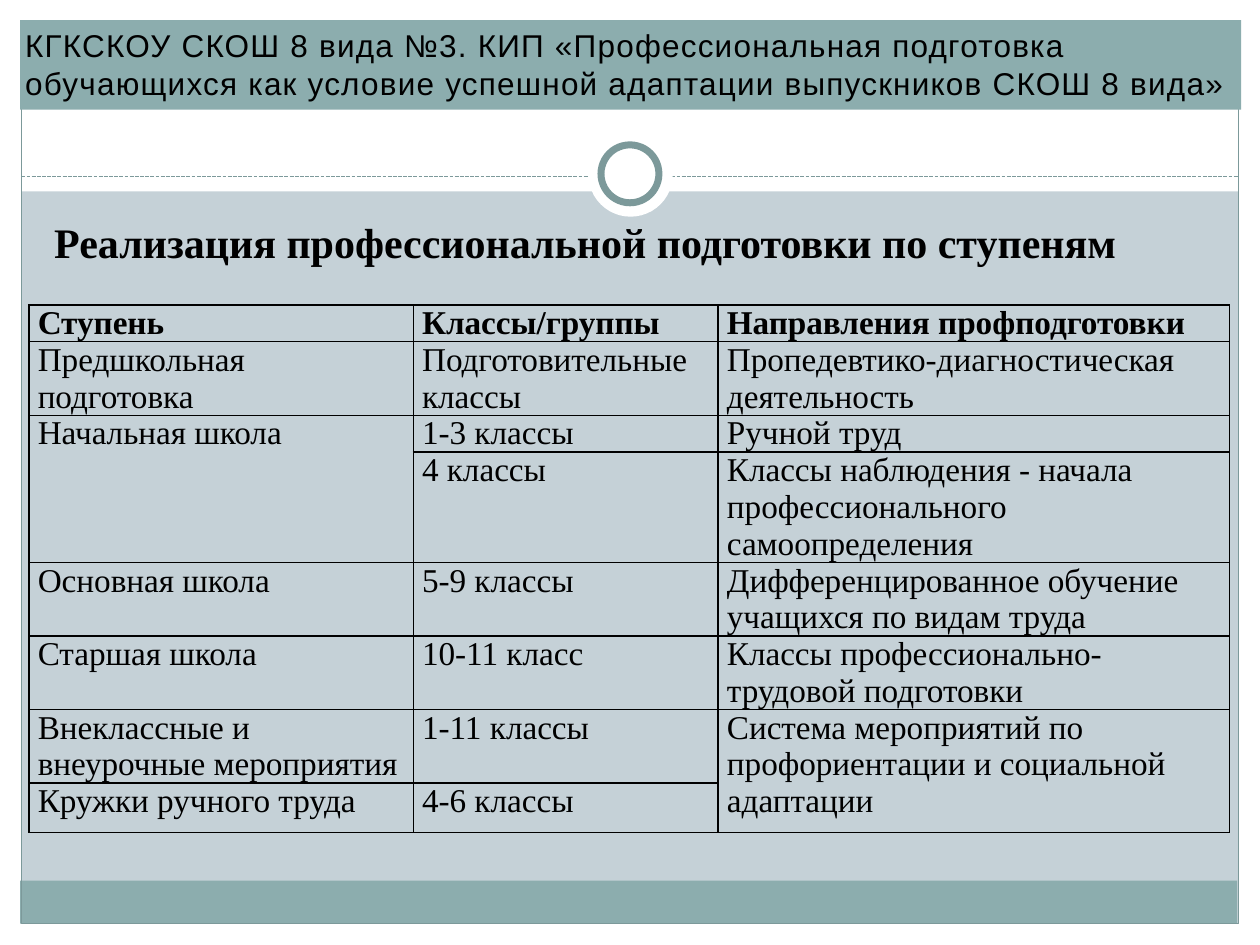
from dataclasses import dataclass
from typing import Optional

from lxml.etree import SubElement
from pptx import Presentation
from pptx.dml.color import RGBColor
from pptx.enum.dml import MSO_LINE
from pptx.enum.shapes import MSO_CONNECTOR, MSO_SHAPE
from pptx.enum.text import MSO_ANCHOR, PP_ALIGN
from pptx.oxml import parse_xml
from pptx.oxml.ns import nsdecls, qn
from pptx.util import Inches, Pt

BLACK = RGBColor(0x00, 0x00, 0x00)
WHITE = RGBColor(0xFF, 0xFF, 0xFF)
BACKGROUND = RGBColor(0xC5, 0xD1, 0xD7)
TEAL = RGBColor(0x8C, 0xAD, 0xAE)
DARK_TEAL = RGBColor(0x7C, 0x99, 0x9A)
SERIF = "Times New Roman"


@dataclass
class Panel:
    left: float
    top: float
    width: float
    height: float
    fill: Optional[RGBColor] = None
    line_width: float = 0
    kind: MSO_SHAPE = MSO_SHAPE.RECTANGLE


FRAME_PANELS = [
    Panel(0, 7.33, 10, 0.17, WHITE),
    Panel(0, 0, 10, 1.52, WHITE),
    Panel(0, 0, 0.17, 7.5, WHITE),
    Panel(9.83, 0, 0.17, 7.5, WHITE),
    Panel(0.16, 6.99, 9.66, 0.34, TEAL),
    Panel(0.17, 0.17, 9.66, 7.16, line_width=0.75),
]
RING_PANELS = [
    Panel(4.67, 1.05, 0.67, 0.67, WHITE, kind=MSO_SHAPE.OVAL),
    Panel(4.77, 1.15, 0.46, 0.46, WHITE, 4, MSO_SHAPE.OVAL),
]
HEADER_PANEL = Panel(0.16, 0.16, 9.69, 0.71, TEAL)
HEADER = (
    "КГКСКОУ СКОШ 8 вида №3. КИП «Профессиональная подготовка "
    "обучающихся как условие успешной адаптации выпускников СКОШ 8 вида»"
)
TITLE = "Реализация профессиональной подготовки по ступеням"
COLUMN_WIDTHS = [3.05, 2.42, 4.06]
ROW_HEIGHTS = [0.29, 0.57, 0.29, 0.6, 0.57, 0.57, 0.58, 0.39]
STAGES = [
    ("Ступень", "Классы/группы", "Направления профподготовки"),
    ("Предшкольная подготовка", "Подготовительные классы",
     "Пропедевтико-диагностическая деятельность"),
    ("Начальная школа", "1-3 классы", "Ручной труд"),
    ("", "4 классы", "Классы наблюдения - начала профессионального самоопределения"),
    ("Основная школа", "5-9 классы", "Дифференцированное обучение учащихся по видам труда"),
    ("Старшая школа", "10-11 класс", "Классы профессионально-трудовой подготовки"),
    ("Внеклассные и внеурочные мероприятия", "1-11 классы",
     "Система мероприятий по профориентации и социальной адаптации"),
    ("Кружки ручного труда", "4-6 классы", ""),
]
MERGES = [((2, 0), (3, 0)), ((6, 2), (7, 2))]


def draw_panel(slide, panel: Panel):
    shape = slide.shapes.add_shape(
        panel.kind, Inches(panel.left), Inches(panel.top),
        Inches(panel.width), Inches(panel.height))
    shape.shadow.inherit = False
    if panel.fill is None:
        shape.fill.background()
    else:
        shape.fill.solid()
        shape.fill.fore_color.rgb = panel.fill
    if panel.line_width:
        shape.line.color.rgb = DARK_TEAL
        shape.line.width = Pt(panel.line_width)
    else:
        shape.line.fill.background()
    return shape


def format_text(text_frame, size: float, family: str, bold: bool, align: PP_ALIGN) -> None:
    for paragraph in text_frame.paragraphs:
        paragraph.alignment = align
        for run in paragraph.runs:
            run.font.size = Pt(size)
            run.font.name = family
            run.font.bold = bold
            run.font.color.rgb = BLACK


def draw_divider(slide) -> None:
    divider = slide.shapes.add_connector(
        MSO_CONNECTOR.STRAIGHT, Inches(0.17), Inches(1.4), Inches(9.83), Inches(1.4))
    divider.line.color.rgb = DARK_TEAL
    divider.line.width = Pt(0.75)
    divider.line.dash_style = MSO_LINE.SQUARE_DOT
    SubElement(divider.element.spPr, qn("a:effectLst"))


def draw_header(slide) -> None:
    header = draw_panel(slide, HEADER_PANEL)
    frame = header.text_frame
    frame.word_wrap = True
    frame.margin_left = frame.margin_right = Inches(0.04)
    frame.margin_top = frame.margin_bottom = Inches(0.05)
    frame.vertical_anchor = MSO_ANCHOR.TOP
    frame.text = HEADER
    format_text(frame, 18, "Arial", False, PP_ALIGN.LEFT)
    frame.paragraphs[0].runs[0].font._element.set("spc", "70")


def place_title(slide) -> None:
    title = slide.shapes.title
    title.left, title.top = Inches(0.33), Inches(1.67)
    title.width, title.height = Inches(9.3), Inches(0.6)
    frame = title.text_frame
    frame.word_wrap = True
    frame.vertical_anchor = MSO_ANCHOR.TOP
    frame.text = TITLE
    format_text(frame, 24, SERIF, True, PP_ALIGN.LEFT)


def add_borders(cell) -> None:
    properties = cell._tc.get_or_add_tcPr()
    for index, side in enumerate(("lnL", "lnR", "lnT", "lnB")):
        properties.insert(index, parse_xml(
            f'<a:{side} {nsdecls("a")} w="{Pt(1)}"><a:solidFill>'
            f'<a:srgbClr val="{BLACK}"/></a:solidFill></a:{side}>'))


def draw_stages(slide) -> None:
    stages = slide.shapes.add_table(
        len(STAGES), len(COLUMN_WIDTHS), Inches(0.23), Inches(2.42),
        Inches(sum(COLUMN_WIDTHS)), Inches(sum(ROW_HEIGHTS))).table
    for column, width in zip(stages.columns, COLUMN_WIDTHS):
        column.width = Inches(width)
    for row, height in zip(stages.rows, ROW_HEIGHTS):
        row.height = Inches(height)
    for row_index, entries in enumerate(STAGES):
        is_heading = row_index == 0
        align = PP_ALIGN.JUSTIFY if is_heading else PP_ALIGN.LEFT
        for column_index, entry in enumerate(entries):
            cell = stages.cell(row_index, column_index)
            cell.margin_left = cell.margin_right = Inches(0.07)
            cell.margin_top = cell.margin_bottom = 0
            cell.fill.background()
            add_borders(cell)
            cell.text_frame.text = entry
            format_text(cell.text_frame, 19, SERIF, is_heading, align)
    for first, last in MERGES:
        stages.cell(*first).merge(stages.cell(*last))


def main() -> None:
    presentation = Presentation()
    presentation.slide_width = Inches(10)
    presentation.slide_height = Inches(7.5)
    slide = presentation.slides.add_slide(presentation.slide_layouts[5])
    slide.background.fill.solid()
    slide.background.fill.fore_color.rgb = BACKGROUND
    for panel in FRAME_PANELS:
        draw_panel(slide, panel)
    draw_divider(slide)
    for panel in RING_PANELS:
        draw_panel(slide, panel)
    draw_stages(slide)
    draw_header(slide)
    place_title(slide)
    presentation.save("out.pptx")


if __name__ == "__main__":
    main()
